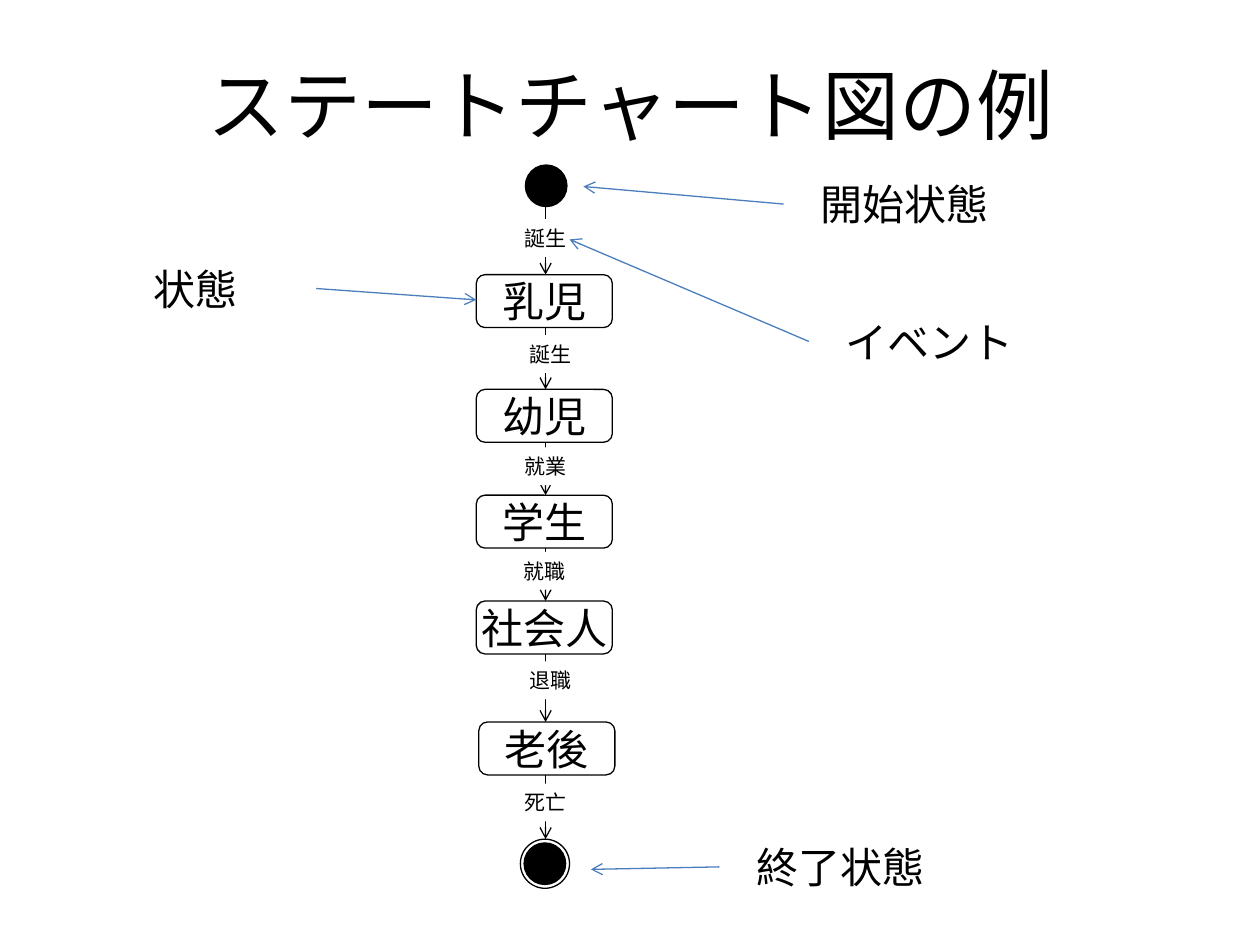
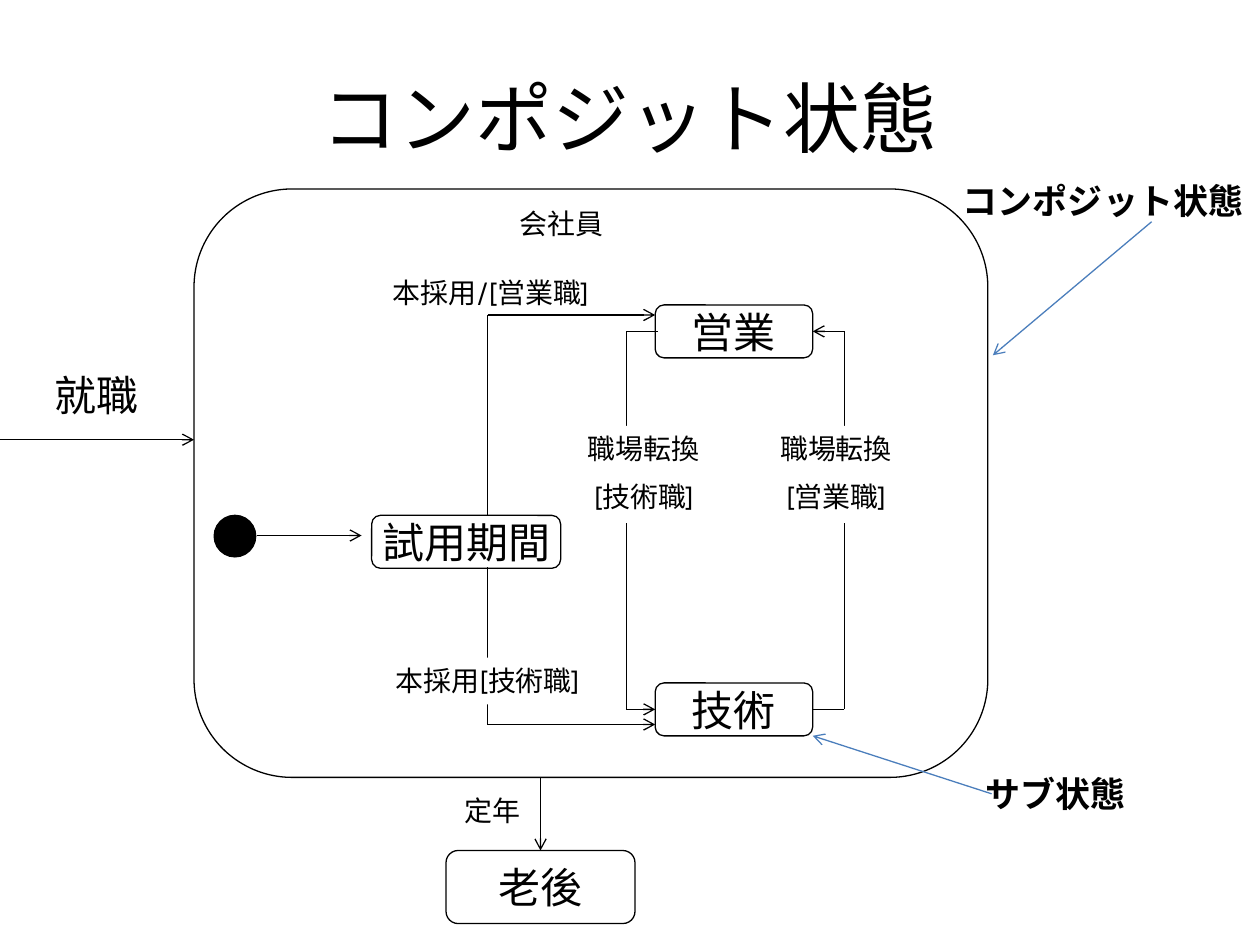
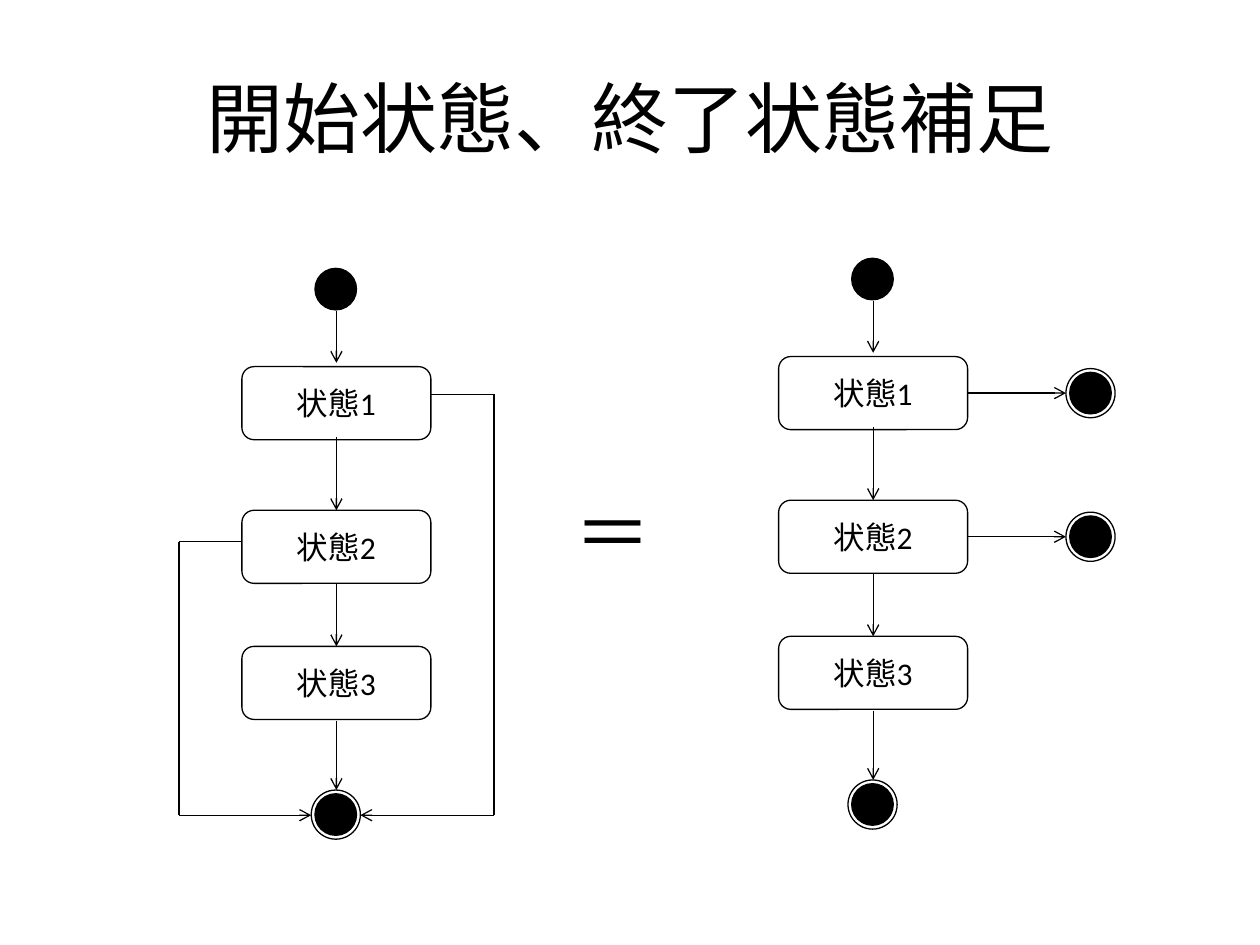
from itertools import pairwise

from lxml import etree
from pptx import Presentation
from pptx.dml.color import RGBColor
from pptx.enum.shapes import MSO_CONNECTOR, MSO_SHAPE
from pptx.enum.text import MSO_ANCHOR, PP_ALIGN
from pptx.oxml.ns import qn
from pptx.util import Inches, Pt

ROUND = MSO_SHAPE.FLOWCHART_ALTERNATE_PROCESS
OVAL = MSO_SHAPE.OVAL
RECT = MSO_SHAPE.RECTANGLE
LINE = MSO_CONNECTOR.STRAIGHT
TOP = MSO_ANCHOR.TOP
MIDDLE = MSO_ANCHOR.MIDDLE
LEFT = PP_ALIGN.LEFT
CENTER = PP_ALIGN.CENTER

COLORS = {"ink": "000000", "paper": "FFFFFF", "note": "4B7EBC"}
HEAD = "Calibri"
BODY = "Karla"
STROKE = Pt(0.75)
DOT = 0.33
RING = 0.39
GAP = (RING - DOT) / 2


def color(name):
    return RGBColor.from_string(COLORS[name])


def write(frame, text, size, font=BODY, bold=False, align=CENTER):
    frame.text = text
    for index, para in enumerate(frame.paragraphs):
        para.alignment = align
        if index:
            para.space_before = Pt(size / 2)
        for run in para.runs:
            run.font.size = Pt(size)
            run.font.name = font
            run.font.bold = bold
            run.font.color.rgb = color("ink")


def start(deck, text, x=0.5, y=0.3):
    slide = deck.slides.add_slide(deck.slide_layouts[5])
    title = slide.shapes.title
    title.left, title.top = Inches(x), Inches(y)
    title.width, title.height = Inches(9), Inches(1.25)
    title.text_frame.vertical_anchor = MIDDLE
    write(title.text_frame, text, 44, HEAD)
    return slide


def shape(slide, kind, x, y, w, h, fill=None, line="ink"):
    item = slide.shapes.add_shape(kind, Inches(x), Inches(y), Inches(w), Inches(h))
    item.shadow.inherit = False
    if fill:
        item.fill.solid()
        item.fill.fore_color.rgb = color(fill)
    else:
        item.fill.background()
    if line:
        item.line.color.rgb = color(line)
        item.line.width = STROKE
    else:
        item.line.fill.background()
    return item


def state(slide, text, x, y, w, h=0.42, size=24, font=BODY, bold=False, line="ink"):
    frame = shape(slide, ROUND, x, y, w, h, line=line).text_frame
    frame.word_wrap = False
    frame.vertical_anchor = MIDDLE
    write(frame, text, size, font, bold)


def label(slide, text, x, y, w, h, size, fill=None, align=CENTER):
    if fill:
        item = shape(slide, RECT, x, y, w, h, fill, None)
    else:
        item = slide.shapes.add_textbox(Inches(x), Inches(y), Inches(w), Inches(h))
    frame = item.text_frame
    frame.word_wrap = True
    frame.vertical_anchor = TOP
    write(frame, text, size, align=align)


def dot(slide, x, y):
    shape(slide, OVAL, x, y, DOT, DOT, "ink")


def ring(slide, x, y):
    dot(slide, x + GAP, y + GAP)
    shape(slide, OVAL, x, y, RING, RING)


def route(slide, points, x=0, y=0, tint="ink"):
    for (ax, ay), (bx, by) in pairwise(points):
        link = slide.shapes.add_connector(
            LINE, Inches(x + ax), Inches(y + ay), Inches(x + bx), Inches(y + by))
        link.line.color.rgb = color(tint)
        link.line.width = STROKE
        etree.SubElement(link.line._get_or_add_ln().getparent(), qn("a:effectLst"))
    etree.SubElement(link.line._get_or_add_ln(), qn("a:tailEnd"), type="arrow")


def life(slide, x, y):
    states = [("乳児", 0, 0.87), ("幼児", 0, 1.78), ("学生", 0, 2.62),
              ("社会人", 0, 3.46), ("老後", 0.02, 4.42)]
    events = [("誕生", 0.24, 0.43), ("誕生", 0.28, 1.35), ("就業", 0.24, 2.24),
              ("就職", 0.23, 3.07), ("退職", 0.28, 3.94), ("死亡", 0.24, 4.91)]
    tops = [top for _, _, top in states]
    ends = [DOT] + [top + 0.42 for top in tops]
    for low, high in zip(ends, tops + [5.35]):
        route(slide, [(0.55, low), (0.55, high)], x, y)
    dot(slide, x + 0.39, y)
    ring(slide, x + 0.35, y + 5.35)
    for text, dx, dy in states:
        state(slide, text, x + dx, y + dy, 1.08)
    for text, dx, dy in events:
        label(slide, text, x + dx, y + dy, 0.62, 0.3, 12, "paper")


def chart(deck):
    slide = start(deck, "ステートチャート図の例", 0.51, 0.2)
    life(slide, 3.78, 1.31)
    notes = [("開始状態", 6.22, 1.37, (6.22, 1.62), (4.63, 1.48)),
             ("イベント", 6.42, 2.46, (6.42, 2.71), (4.52, 1.9)),
             ("状態", 0.59, 2.04, (2.51, 2.29), (3.78, 2.38)),
             ("終了状態", 5.71, 6.63, (5.71, 6.88), (4.69, 6.9))]
    for text, x, y, *ends in notes:
        label(slide, text, x, y, 1.92, 0.5, 24)
        route(slide, ends, tint="note")


def firm(slide, x, y):
    shape(slide, ROUND, x, y, 6.3, 4.67)
    dot(slide, x + 0.16, y + 2.59)
    for text, dx, dy, w in [("試用期間", 1.41, 2.59, 1.5),
                            ("営業", 3.66, 0.92, 1.25),
                            ("技術", 3.66, 3.92, 1.25)]:
        state(slide, text, x + dx, y + dy, w)
    for points in [
        [(0.5, 2.75), (1.33, 2.75)],
        [(2.33, 2.59), (2.33, 1), (3.66, 1)],
        [(2.33, 3), (2.33, 4.25), (3.66, 4.25)],
        [(4.91, 4.13), (5.16, 4.13), (5.16, 1.13), (4.91, 1.13)],
        [(3.68, 1.13), (3.43, 1.13), (3.43, 4.13), (3.66, 4.13)],
    ]:
        route(slide, points, x, y)
    for text, dx, dy, w, h, fill in [
        ("会社員", 1.75, 0.09, 2.33, 0.37, None),
        ("本採用/[営業職]", 1.41, 0.64, 1.89, 0.37, None),
        ("本採用[技術職]", 1.3, 3.72, 2.06, 0.37, "paper"),
        ("職場転換\n[営業職]", 4.55, 1.88, 1.09, 0.77, "paper"),
        ("職場転換\n[技術職]", 3, 1.88, 1.14, 0.77, "paper"),
    ]:
        label(slide, text, x + dx, y + dy, w, h, 16, fill)


def nested(deck):
    slide = start(deck, "コンポジット状態")
    firm(slide, 1.54, 1.5)
    route(slide, [(0, 3.49), (1.54, 3.49)])
    label(slide, "就職", 0.2, 2.88, 1.13, 0.5, 24)
    state(slide, "老後", 3.54, 6.75, 1.5, 0.58)
    route(slide, [(4.29, 6.17), (4.29, 6.75)])
    label(slide, "定年", 3.37, 6.25, 1.08, 0.37, 16)
    for text, x, y, w, *ends in [
        ("コンポジット状態", 7.51, 1.3, 2.49, (9.14, 1.76), (7.88, 2.82)),
        ("サブ状態", 7.63, 6.01, 1.5, (7.87, 6.3), (6.45, 5.84)),
    ]:
        state(slide, text, x, y, w, 0.58, 20, bold=True, line=None)
        route(slide, ends, tint="note")


def steps(slide, x, y):
    dot(slide, x + 0.58, y)
    for number, dy in enumerate([0.78, 1.92, 3], 1):
        state(slide, f"状態{number}", x, y + dy, 1.5, 0.58, 18, HEAD)
    for low, high in [(0.34, 0.75), (1.34, 1.92), (2.5, 3), (3.59, 4.14)]:
        route(slide, [(0.75, low), (0.75, high)], x, y)
    ring(slide, x + 0.55, y + 4.14)


def merged(slide, x, y):
    steps(slide, x, y)
    route(slide, [(1.5, 1), (2, 1), (2, 4.34), (0.94, 4.34)], x, y)
    route(slide, [(0, 2.17), (-0.5, 2.17), (-0.5, 4.34), (0.55, 4.34)], x, y)


def split(slide, x, y):
    steps(slide, x, y)
    for dy in (1.07, 2.21):
        route(slide, [(1.5, dy), (2.28, dy)], x, y)
        ring(slide, x + 2.28, y + dy - RING / 2)


def equal(deck):
    slide = start(deck, "開始状態、終了状態補足")
    merged(slide, 1.92, 2.13)
    label(slide, "＝", 4.46, 3.8, 0.76, 0.83, 44, align=LEFT)
    split(slide, 6.18, 2.05)


def main():
    deck = Presentation()
    deck.slide_width, deck.slide_height = Inches(10), Inches(7.5)
    chart(deck)
    nested(deck)
    equal(deck)
    deck.save("out.pptx")


if __name__ == "__main__":
    main()
